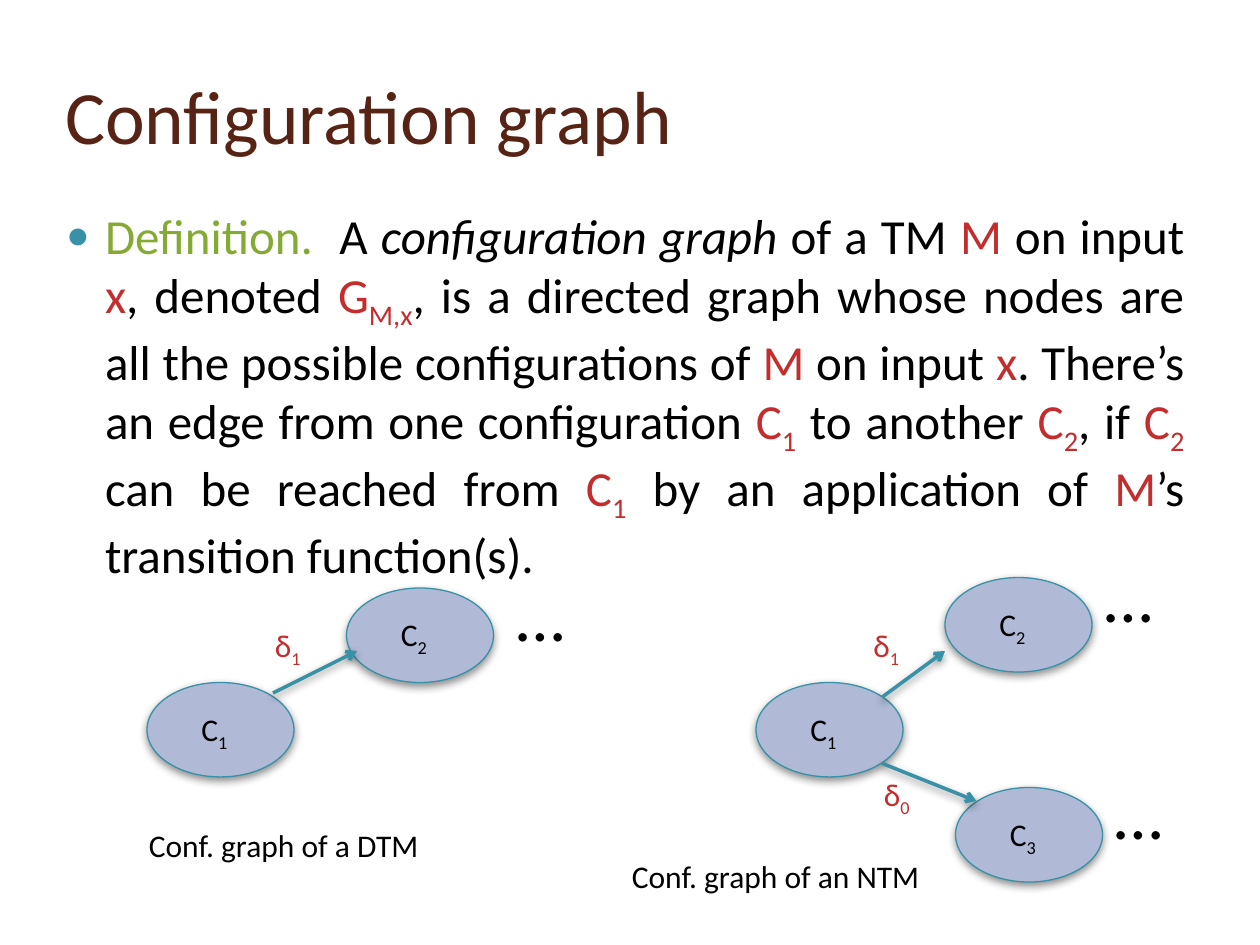
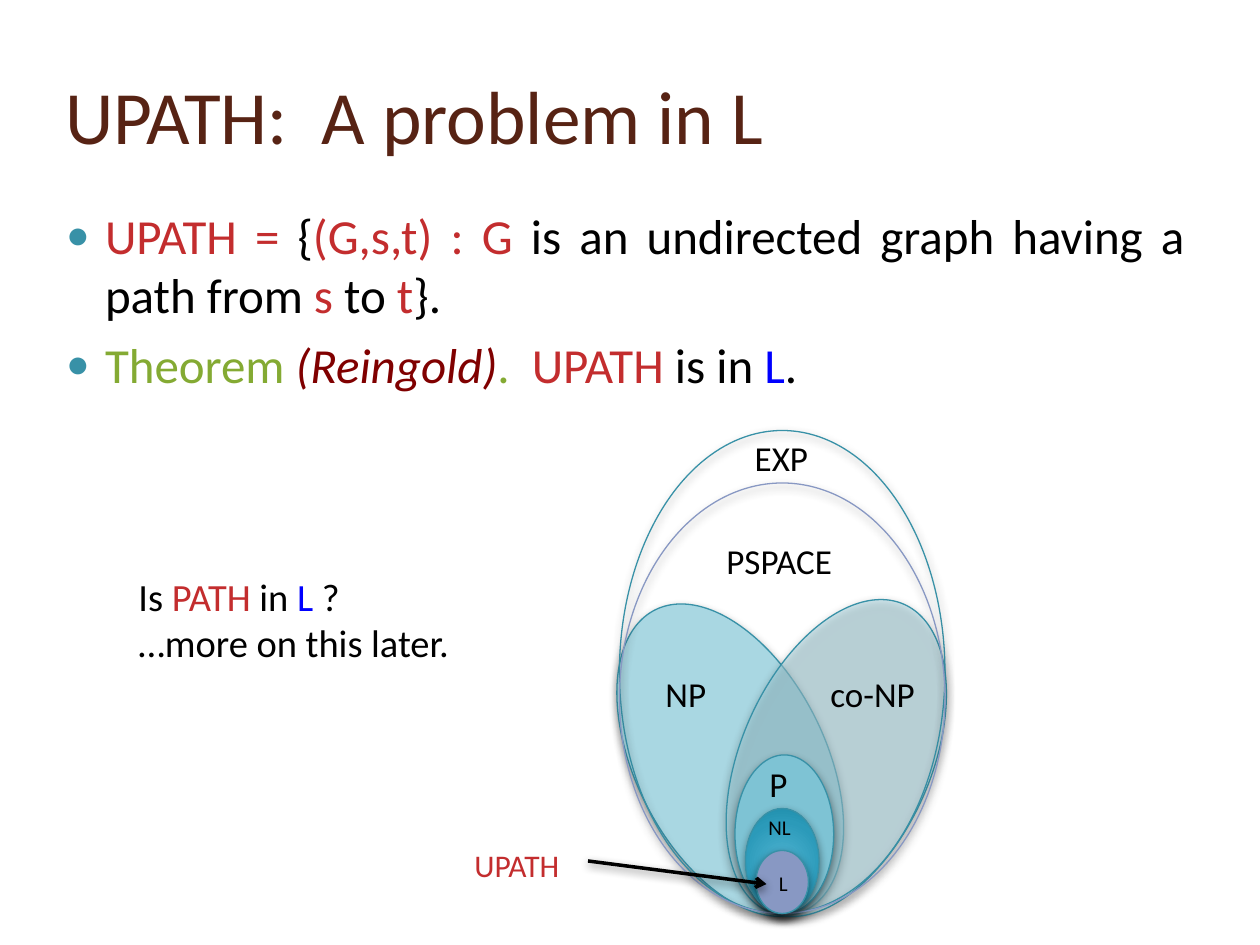
from lxml.etree import SubElement as Sub
from pptx import Presentation
from pptx.dml.color import RGBColor as RGB
from pptx.enum.shapes import MSO_CONNECTOR as Link, MSO_SHAPE as Geom
from pptx.enum.text import MSO_ANCHOR as Anchor, MSO_AUTO_SIZE as Fit, PP_ALIGN as Align
from pptx.oxml.ns import qn
from pptx.util import Pt

PX = 7620  # 120 px to the inch
FONT = "Calibri"
BLACK = RGB(0, 0, 0)
BROWN = RGB(0x57, 0x23, 0x14)
RED = RGB(0xC3, 0x2D, 0x2E)
GREEN = RGB(0x84, 0xAA, 0x33)
MAROON = RGB(0x80, 0, 0)
BLUE = RGB(0, 0, 0xFF)
TEAL = RGB(0x38, 0x91, 0xA7)
MIST = RGB(0xB0, 0xBA, 0xD7)
PALE = RGB(0xA9, 0xD7, 0xE2)
AQUA = RGB(0x7E, 0xC3, 0xD4)
LILAC = RGB(0x88, 0x98, 0xC3)
STOPS = [(0, "45ACCC"), (15, "45ACCB"), (62, "2B9AB9"), (97, "1C8AA7"), (100, "0E89A7")]
NODE = (140, 90)


def px(*nums):
    return [n * PX for n in nums]


def tag(node, name, **atts):
    return Sub(node, qn("a:" + name), {k: str(v) for k, v in atts.items()})


# Text: a line is a list of (text, colour, mark); mark is "sub" or "ital"
def plain(text, color=BLACK):
    return [(text, color, "")]


def sub(base, low, color=BLACK):
    return [(base, color, ""), (low, color, "sub")]


def fill_par(par, line, size):
    for text, color, mark in line:
        run = par.add_run()
        run.text = text
        font = run.font
        font.name, font.size, font.color.rgb = FONT, Pt(size), color
        if mark == "ital":
            font.italic = True
        if mark == "sub":
            font._element.set("baseline", "-25000")


def fill_text(frame, lines, size):
    for i, line in enumerate(lines):
        par = frame.paragraphs[0] if i == 0 else frame.add_paragraph()
        fill_par(par, line, size)
    return frame.paragraphs


def place(shape, *box):
    shape.left, shape.top, shape.width, shape.height = px(*box)


def label(slide, box, *lines, size=18):
    frame = slide.shapes.add_textbox(*px(*box)).text_frame
    frame.word_wrap = True
    frame.auto_size = Fit.SHAPE_TO_FIT_TEXT
    fill_text(frame, lines, size)


def dots(slide, x, y, wide=200):
    label(slide, (x, y, wide, 92), plain("…"), size=40)


def bullet(par):
    par.alignment = Align.JUSTIFY
    par.space_before = Pt(6)
    prop = par._p.get_or_add_pPr()
    prop.set("marL", str(48 * PX))
    prop.set("indent", str(-37 * PX))
    tag(tag(prop, "buClr"), "srgbClr", val=TEAL)
    tag(prop, "buSzPct", val=80000)
    tag(prop, "buFont", typeface="Arial")
    tag(prop, "buChar", char="●")


def new_slide(deck, head, *items):
    slide = deck.slides.add_slide(deck.slide_layouts[1])
    title, body = slide.placeholders
    place(title, 50, 40, 1060, 138)
    frame = title.text_frame
    frame.vertical_anchor = Anchor.MIDDLE
    frame.auto_size = Fit.NONE
    fill_text(frame, [plain(head, BROWN)], 43)[0].alignment = Align.LEFT
    place(body, 40, 190, 1100, 660)
    body.text_frame.auto_size = Fit.NONE
    for par in fill_text(body.text_frame, items, 28):
        bullet(par)
    return slide


# Shapes
def shade(shape):
    shape_pr = shape._element.spPr
    for old in shape_pr.findall(qn("a:effectLst")):
        shape_pr.remove(old)
    drop = tag(tag(shape_pr, "effectLst"), "outerShdw", blurRad=Pt(5), dist=Pt(2),
               dir=5400000, algn="ctr", rotWithShape=0)
    tag(tag(drop, "srgbClr", val=BLACK), "alpha", val=43000)


def glow(shape):
    """Give the shape a round gradient from its centre."""
    shape_pr = shape._element.spPr
    grad = tag(shape_pr, "gradFill", rotWithShape=1)
    stops = tag(grad, "gsLst")
    for pos, color in STOPS:
        tag(tag(stops, "gs", pos=pos * 1000), "srgbClr", val=color)
    round_ = tag(grad, "path", path="circle")
    tag(round_, "fillToRect", l=50000, t=50000, r=50000, b=50000)
    shape_pr.find(qn("a:prstGeom")).addnext(grad)


def oval(slide, box, color=None, line=TEAL, turn=0, alpha=None, grad=False):
    shape = slide.shapes.add_shape(Geom.OVAL, *px(*box))
    shape.rotation = turn
    if grad:
        glow(shape)
    elif color is None:
        shape.fill.background()
    else:
        shape.fill.solid()
        shape.fill.fore_color.rgb = color
    if alpha:
        tag(shape._element.spPr.find(qn("a:solidFill"))[0], "alpha", val=alpha * 1000)
    shape.line.color.rgb = line
    shape.line.width = Pt(0.75)
    shade(shape)


def arrow(slide, ends, color=TEAL):
    link = slide.shapes.add_connector(Link.STRAIGHT, *px(*ends))
    link.line.color.rgb = color
    link.line.width = Pt(2)
    tag(link.line._get_or_add_ln(), "tailEnd", type="arrow")
    shade(link)


# Slides
def graph_slide(deck):
    c1, c2 = sub("C", "1", RED), sub("C", "2", RED)
    m, x = plain("M", RED), plain("x", RED)
    slide = new_slide(deck, "Configuration graph", [
        *plain("Definition.  ", GREEN), *plain("A "),
        ("configuration graph", BLACK, "ital"), *plain(" of a TM "), *m,
        *plain(" on input "), *x, *plain(", denoted "), *sub("G", "M,x", RED),
        *plain(", is a directed graph whose nodes are all the possible configurations of "),
        *m, *plain(" on input "), *x,
        *plain(". There’s an edge from one configuration "), *c1,
        *plain(" to another "), *c2, *plain(", if "), *c2,
        *plain(" can be reached from "), *c1, *plain(" by an application of "), *m,
        *plain("’s transition function(s).")])

    # Nodes: place, index, label place
    nodes = [(140, 650, "1", 180, 670), (330, 560, "2", 370, 580),
             (720, 650, "1", 760, 670), (900, 550, "2", 940, 570),
             (910, 750, "3", 950, 770)]
    for left, top, *_ in nodes:
        oval(slide, (left, top, *NODE), MIST)
    for ends in [(260, 660, 340, 620), (840, 664, 900, 620), (840, 727, 930, 763)]:
        arrow(slide, ends)
    for _, _, num, left, top in nodes:
        label(slide, (left, top, 70, 50), sub("C", num))
    for left, top, num in [(250, 590, "1"), (820, 590, "1"), (830, 732, "0")]:
        label(slide, (left, top, 70, 48), sub("δ", num, RED))

    label(slide, (130, 781, 290, 48), plain("Conf. graph of a DTM"))
    label(slide, (590, 810, 310, 48), plain("Conf. graph of an NTM"))
    dots(slide, 480, 538)
    dots(slide, 1040, 520, 150)
    dots(slide, 1050, 727, 150)


def class_slide(deck):
    slide = new_slide(
        deck, "UPATH:  A problem in L",
        [*plain("UPATH = ", RED), *plain("{"), *plain("(G,s,t) : G ", RED),
         *plain("is an undirected graph having a path from"), *plain(" s ", RED),
         *plain("to "), *plain("t", RED), *plain("}.")],
        [*plain("Theorem ", GREEN), ("(Reingold)", MAROON, "ital"),
         *plain(".  ", GREEN), *plain("UPATH ", RED), *plain("is in "),
         *plain("L", BLUE), *plain(".")])

    # Nested classes, from back to front
    oval(slide, (605, 564, 181, 320), PALE, turn=333.5)
    oval(slide, (706, 562, 181, 320), PALE, turn=23.7, alpha=50)
    oval(slide, (700, 719, 94, 151), AQUA)
    oval(slide, (590, 410, 310, 460))
    oval(slide, (590, 460, 310, 410), line=LILAC)
    oval(slide, (710, 770, 70, 100), grad=True)
    oval(slide, (720, 810, 50, 60), LILAC)
    for text, left, top, wide in [("NP", 622, 635, 72), ("co-NP", 779, 635, 134),
                                  ("P", 721, 720, 72), ("EXP", 707, 410, 103),
                                  ("PSPACE", 680, 508, 140)]:
        label(slide, (left, top, wide, 53), plain(text), size=20)
    label(slide, (720, 770, 50, 36), plain("NL"), size=12)
    label(slide, (730, 823, 30, 36), plain("L"), size=12)

    arrow(slide, (560, 820, 730, 842), BLACK)
    label(slide, (440, 800, 120, 48), plain("UPATH", RED))
    label(slide, (120, 540, 390, 101),
          [*plain("Is "), *plain("PATH", RED), *plain(" in "), *plain("L", BLUE),
           *plain(" ?")],
          plain("…more on this later."), size=22)


def main():
    deck = Presentation()
    deck.slide_width, deck.slide_height = px(1200, 900)
    graph_slide(deck)
    class_slide(deck)
    deck.save("out.pptx")


if __name__ == "__main__":
    main()
